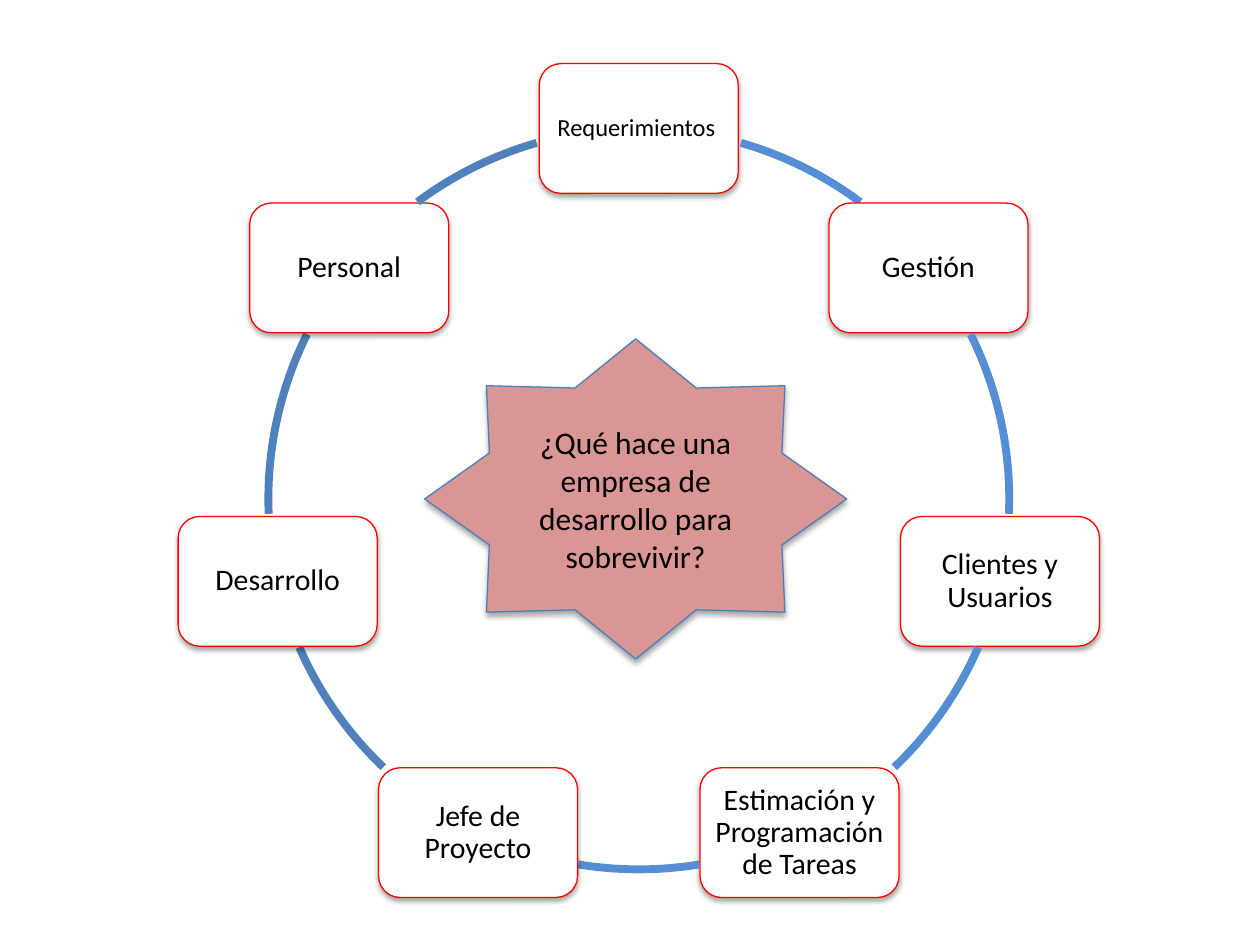
from math import cos, sin, radians
from lxml.etree import SubElement
from pptx import Presentation
from pptx.dml.color import RGBColor
from pptx.enum.shapes import MSO_SHAPE as Kind
from pptx.enum.text import MSO_ANCHOR as Anchor, PP_ALIGN as Align
from pptx.oxml.ns import qn
from pptx.util import Inches, Pt

COLORS = {
    "white": "FFFFFF", "black": "000000", "red": "FF0000",
    "light": "558ED5", "blue": "4F81BD", "rose": "D99694", "edge": "4B7EBC",
}
MID_X, MID_Y, RADIUS = 5.07, 3.96, 2.94
BOX_W, BOX_H = 1.58, 1.03
TOPICS = [
    "Requerimientos", "Gestión", "Clientes y Usuarios",
    "Estimación y Programación de Tareas", "Jefe de Proyecto",
    "Desarrollo", "Personal",
]
# Start and end in degrees, clockwise from three o'clock
RIGHT = [(-74, -53.3), (-26.4, 2.3), (23.6, 46.4)]
LEFT = [(180 - end, 180 - start) for start, end in reversed(RIGHT)]
ARCS = RIGHT + [(80.6, 99.4)] + LEFT


def color(name):
    return RGBColor.from_string(COLORS[name])


def add_shadow(shape):
    shape.shadow.inherit = False
    effects = shape._element.spPr.find(qn("a:effectLst"))
    outer = SubElement(effects, qn("a:outerShdw"), blurRad=str(Pt(3.1)),
                       dist=str(Pt(1.8)), dir="5400000", rotWithShape="0")
    tint = SubElement(outer, qn("a:srgbClr"), val=COLORS["black"])
    SubElement(tint, qn("a:alpha"), val="35000")


def add_run(para, text, size):
    run = para.add_run()
    run.text = text
    run.font.name = "Calibri"
    run.font.size = Pt(size)
    run.font.color.rgb = color("black")


def add_panel(slide, kind, left, top, width, height, fill, line):
    """Add a filled, shadowed shape and return it with its centred paragraph."""
    shape = slide.shapes.add_shape(
        kind, Inches(left), Inches(top), Inches(width), Inches(height))
    shape.fill.solid()
    shape.fill.fore_color.rgb = color(fill)
    shape.line.color.rgb = color(line)
    shape.line.width = Pt(0.75)
    add_shadow(shape)
    frame = shape.text_frame
    frame.word_wrap = True
    frame.vertical_anchor = Anchor.MIDDLE
    para = frame.paragraphs[0]
    para.alignment = Align.CENTER
    return shape, para


def add_topic(slide, index, text):
    angle = radians(360 * index / len(TOPICS) - 90)
    left = MID_X + RADIUS * cos(angle) - BOX_W / 2
    top = MID_Y + RADIUS * sin(angle) - BOX_H / 2
    shape, para = add_panel(slide, Kind.ROUNDED_RECTANGLE, left, top,
                            BOX_W, BOX_H, "white", "red")
    first = index == 0
    frame = shape.text_frame
    frame.margin_left = frame.margin_right = Inches(0.06 if first else 0.07)
    frame.margin_top = frame.margin_bottom = frame.margin_left
    para.line_spacing = 0.9
    add_run(para, text, 14 if first else 17)
    if first:
        add_run(para, " ", 12)


def add_arc(slide, start, end, tone):
    arc = slide.shapes.add_shape(
        Kind.ARC, Inches(MID_X - RADIUS), Inches(MID_Y - RADIUS),
        Inches(2 * RADIUS), Inches(2 * RADIUS))
    # One degree is 60000 units; an adjustment counts in 100000
    arc.adjustments[0] = start % 360 * 0.6
    arc.adjustments[1] = end % 360 * 0.6
    arc.fill.background()
    arc.line.color.rgb = color(tone)
    arc.line.width = Pt(4.5)
    arc.shadow.inherit = False


def add_star(slide):
    _, para = add_panel(slide, Kind.STAR_8_POINT, 3.37, 2.69, 3.35, 2.54,
                        "rose", "edge")
    add_run(para, "¿Qué hace una empresa de desarrollo para sobrevivir?", 18)


def main():
    deck = Presentation()
    deck.slide_width, deck.slide_height = Inches(10), Inches(7.5)
    slide = deck.slides.add_slide(deck.slide_layouts[6])
    for index, (text, (start, end)) in enumerate(zip(TOPICS, ARCS)):
        add_topic(slide, index, text)
        add_arc(slide, start, end, "light" if index < 4 else "blue")
    add_star(slide)
    deck.save("out.pptx")


if __name__ == "__main__":
    main()
